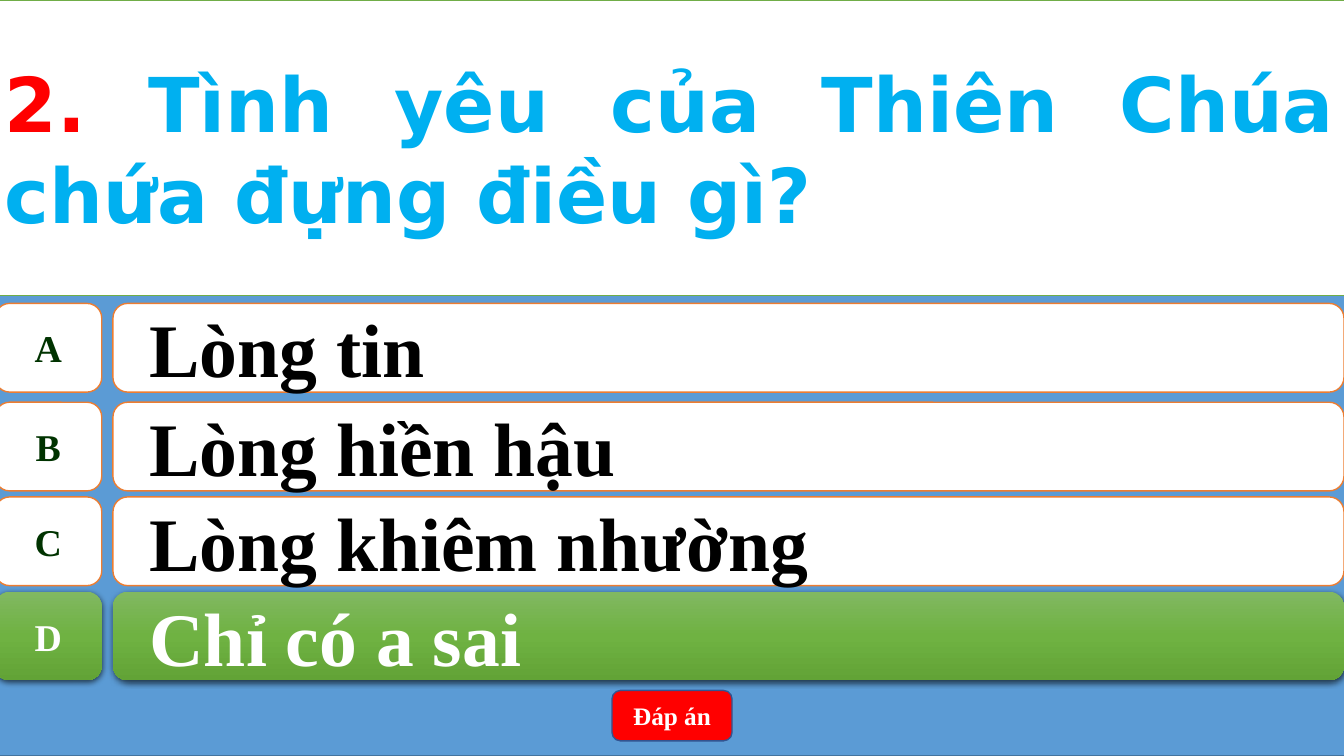
import copy

from pptx import Presentation
from pptx import util as u
from pptx.dml.color import RGBColor
from pptx.enum import shapes, text
from pptx.oxml import parse_xml
from pptx.oxml import ns

WHITE = RGBColor(0xFF, 0xFF, 0xFF)
BLACK = RGBColor(0x00, 0x00, 0x00)
RED = RGBColor(0xFF, 0x00, 0x00)
SKY = RGBColor(0x00, 0xB0, 0xF0)
BLUE = RGBColor(0x5B, 0x9B, 0xD5)
BLUE_EDGE = RGBColor(0x43, 0x73, 0x9E)
BUTTON_EDGE = RGBColor(0x32, 0x54, 0x91)
ORANGE = RGBColor(0xED, 0x7D, 0x31)
GREEN = RGBColor(0x70, 0xAD, 0x47)
DARK_GREEN = RGBColor(0x00, 0x33, 0x00)
GREEN_STOPS = [
    RGBColor(0x81, 0xB8, 0x61),
    RGBColor(0x6F, 0xB2, 0x42),
    RGBColor(0x62, 0xA3, 0x36),
]
SERIF = "Times New Roman"
SANS = "DejaVu Sans"
SHADOW = (
    f'<a:effectLst {ns.nsdecls("a")}>'
    '<a:outerShdw blurRad="57150" dist="19050" dir="5400000" algn="ctr" rotWithShape="0">'
    '<a:srgbClr val="000000"><a:alpha val="63000"/></a:srgbClr>'
    "</a:outerShdw></a:effectLst>"
)
SHAPE = shapes.MSO_SHAPE
ALIGN = text.PP_ALIGN


class QuizSlide:
    """Draws the panels, question, answers and button of a quiz slide."""

    def __init__(self, slide):
        self.slide = slide

    def box(self, kind, left, top, width, height, fill=None, line=None):
        place = [u.Inches(value) for value in (left, top, width, height)]
        shape = self.slide.shapes.add_shape(kind, *place)
        shape.shadow.inherit = False
        if fill is not None:
            shape.fill.solid()
            shape.fill.fore_color.rgb = fill
        if line is None:
            shape.line.fill.background()
        else:
            shape.line.color.rgb = line
            shape.line.width = u.Pt(1)
        return shape

    def label(self, shape, parts, size, font=SERIF, align=ALIGN.CENTER):
        frame = shape.text_frame
        frame.word_wrap = True
        frame.vertical_anchor = text.MSO_ANCHOR.MIDDLE
        paragraph = frame.paragraphs[0]
        paragraph.alignment = align
        for words, color in parts:
            run = paragraph.add_run()
            run.text = words
            run.font.name = font
            run.font.size = u.Pt(size)
            run.font.bold = True
            run.font.color.rgb = color
        return paragraph

    def highlight(self, shape):
        shape.fill.gradient()
        shape.fill.gradient_angle = 270
        stop_list = shape._element.spPr.find(".//" + ns.qn("a:gsLst"))
        middle = copy.deepcopy(stop_list[0])
        middle.set("pos", "50000")
        stop_list.insert(1, middle)
        for stop, color in zip(shape.fill.gradient_stops, GREEN_STOPS):
            stop.color.rgb = color
        properties = shape._element.spPr
        properties.remove(properties.find(ns.qn("a:effectLst")))
        properties.append(parse_xml(SHADOW))

    def answer(self, letter, words, top, correct=False):
        fill, line = (None, None) if correct else (WHITE, ORANGE)
        tab = self.box(SHAPE.FLOWCHART_ALTERNATE_PROCESS, -0.05, top, 1.06, 0.88, fill, line)
        bar = self.box(SHAPE.ROUNDED_RECTANGLE, 1.12, top, 12.21, 0.88, fill, line)
        if correct:
            self.highlight(tab)
            self.highlight(bar)
        self.label(tab, [(letter, WHITE if correct else DARK_GREEN)], 27)
        tab.text_frame.word_wrap = False
        paragraph = self.label(bar, [(words, WHITE if correct else BLACK)], 54, align=ALIGN.LEFT)
        indents = paragraph._p.get_or_add_pPr()
        indents.set("marL", str(u.Inches(0.5)))
        indents.set("indent", str(u.Inches(-0.28)))

    def question(self, number, words):
        panel = self.box(SHAPE.RECTANGLE, -0.05, 0, 13.39, 2.93, WHITE, GREEN)
        self.label(panel, [(number, RED), (words, SKY)], 54, SANS, ALIGN.JUSTIFY)

    def button(self, words):
        shape = self.box(SHAPE.ROUNDED_RECTANGLE, 6.07, 6.85, 1.19, 0.5, RED, BUTTON_EDGE)
        self.label(shape, [(words, WHITE)], 18)


def main():
    presentation = Presentation()
    presentation.slide_width = u.Inches(13.33)
    presentation.slide_height = u.Inches(7.5)
    quiz = QuizSlide(presentation.slides.add_slide(presentation.slide_layouts[6]))
    quiz.box(SHAPE.RECTANGLE, -0.05, 0, 13.39, 7.5, BLUE, BLUE_EDGE)
    quiz.button("Đáp án")
    answers = [
        ("A", "Lòng tin", 3.01),
        ("B", "Lòng hiền hậu", 3.99),
        ("C", "Lòng khiêm nhường", 4.93),
        ("D", "Chỉ có a sai", 5.87),
    ]
    for letter, words, top in answers:
        quiz.answer(letter, words, top, correct=letter == "D")
    quiz.question("2. ", "Tình yêu của Thiên Chúa chứa đựng điều gì?")
    presentation.save("out.pptx")


if __name__ == "__main__":
    main()
